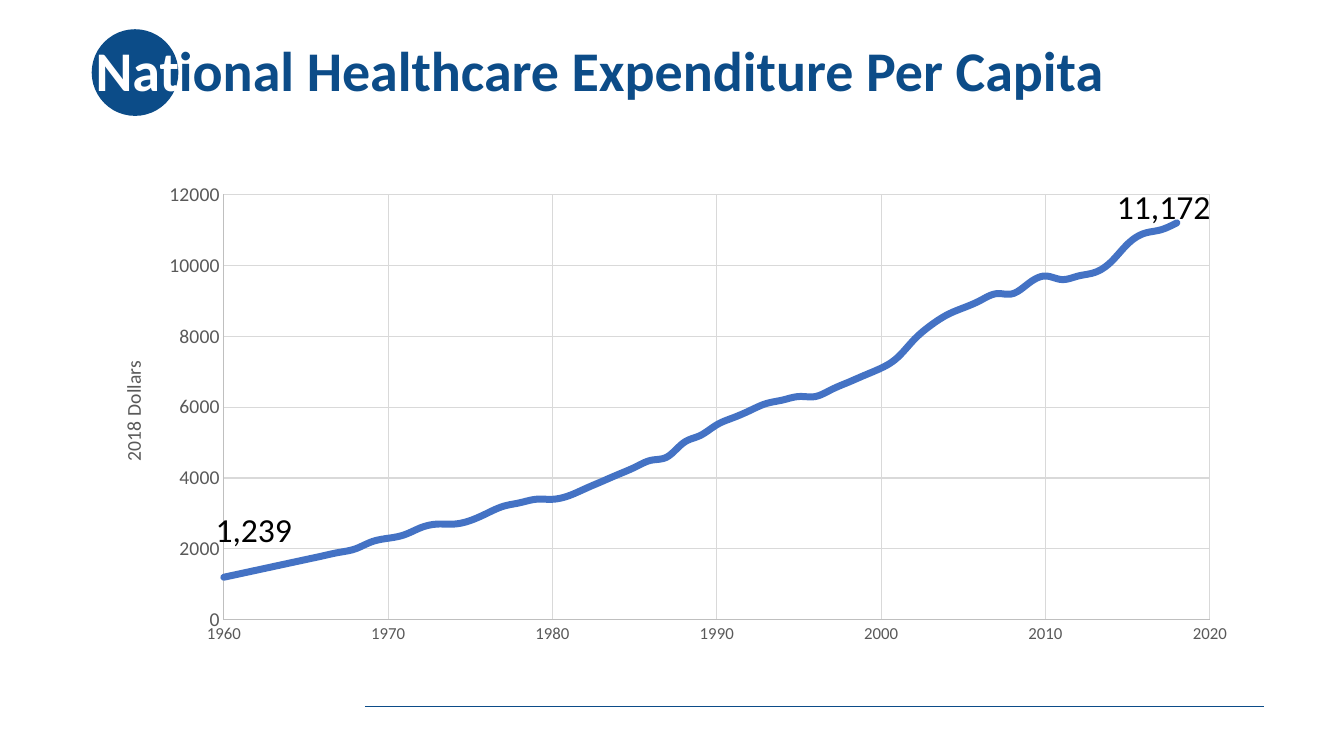
from lxml.etree import SubElement
from pptx import Presentation
from pptx.chart.data import XyChartData
from pptx.dml.color import RGBColor
from pptx.enum.chart import XL_CHART_TYPE, XL_TICK_LABEL_POSITION, XL_TICK_MARK
from pptx.enum.shapes import MSO_CONNECTOR, MSO_SHAPE
from pptx.enum.text import MSO_ANCHOR
from pptx.oxml import parse_xml
from pptx.oxml.ns import nsdecls, qn
from pptx.util import Inches, Pt

NAVY = RGBColor(0x0C, 0x4C, 0x88)
BLUE = RGBColor(0x44, 0x72, 0xC4)
WHITE = RGBColor(0xFF, 0xFF, 0xFF)
BLACK = RGBColor(0x00, 0x00, 0x00)
TEXT_GRAY = RGBColor(0x59, 0x59, 0x59)
AXIS_GRAY = RGBColor(0xBF, 0xBF, 0xBF)
GRID_GRAY = RGBColor(0xD9, 0xD9, 0xD9)
FONT = "Calibri"

TITLE = [("Nat", WHITE), ("ional Healthcare Expenditure Per Capita", NAVY)]
AXIS_TITLE = "2018 Dollars"
FIRST_YEAR = 1960
SPENDING = [
    1200, 1300, 1400, 1500, 1600, 1700, 1800, 1900, 2000, 2200,
    2300, 2400, 2600, 2700, 2700, 2800, 3000, 3200, 3300, 3400,
    3400, 3500, 3700, 3900, 4100, 4300, 4500, 4600, 5000, 5200,
    5500, 5700, 5900, 6100, 6200, 6300, 6300, 6500, 6700, 6900,
    7100, 7400, 7900, 8300, 8600, 8800, 9000, 9200, 9200, 9500,
    9700, 9600, 9700, 9800, 10100, 10600, 10900, 11000, 11200,
]
CALLOUTS = [
    ("1,239", (2.04, 5, 0.97, 0.5)),
    ("11,172", (10.98, 1.8, 1.14, 0.5)),
]
# minimum, maximum, major unit, label size
YEAR_SCALE = (1960, 2020, 10, 12)
DOLLAR_SCALE = (0, 12000, 2000, 14)
# left, top, width, height on the slide
CHART_PLACE = (0.92, 1.72, 11.5, 4.76)
PLOT_PLACE = (2.22, 1.93, 9.78, 4.22)
AXIS_TITLE_PLACE = (1.15, 3.54)


def set_font(font, size, color, bold=False):
    values = {"name": FONT, "size": Pt(size), "bold": bold}
    for name, value in values.items():
        setattr(font, name, value)
    font.color.rgb = color


def set_line(line, color, width):
    line.color.rgb = color
    line.width = Pt(width)


def add_text(page, spans, place, size, bold=False, wrap=False):
    """Add a one-paragraph box from (text, color) spans."""
    box = page.shapes.add_textbox(*map(Inches, place))
    box.text_frame.word_wrap = wrap
    para = box.text_frame.paragraphs[0]
    for text, color in spans:
        span = para.add_run()
        span.text = text
        set_font(span.font, size, color, bold)
    return box


def format_axis(axis, scale):
    low, high, unit, size = scale
    values = {
        "minimum_scale": low, "maximum_scale": high, "major_unit": unit,
        "major_tick_mark": XL_TICK_MARK.NONE,
        "minor_tick_mark": XL_TICK_MARK.NONE,
        "tick_label_position": XL_TICK_LABEL_POSITION.NEXT_TO_AXIS,
        "has_major_gridlines": True,
    }
    for name, value in values.items():
        setattr(axis, name, value)
    axis.tick_labels.number_format = "General"
    axis.tick_labels.number_format_is_linked = False
    set_font(axis.tick_labels.font, size, TEXT_GRAY)
    set_line(axis.format.line, AXIS_GRAY, 0.75)
    set_line(axis.major_gridlines.format.line, GRID_GRAY, 0.75)


def set_layout(element, index, place, target=""):
    """Fix a chart part at a slide place, stored as fractions of the chart."""
    left, top, width, height = CHART_PLACE
    fractions = [(place[0] - left) / width, (place[1] - top) / height]
    if len(place) == 4:
        fractions += [place[2] / width, place[3] / height]
    inner = f'<c:layoutTarget val="{target}"/>' if target else ""
    inner += '<c:xMode val="edge"/><c:yMode val="edge"/>'
    inner += "".join(f'<c:{key} val="{value:.4f}"/>' for key, value in zip("xywh", fractions))
    for old in element.findall(qn("c:layout")):
        element.remove(old)
    element.insert(index, parse_xml(
        f'<c:layout {nsdecls("c")}><c:manualLayout>{inner}</c:manualLayout></c:layout>'))


def add_spending_chart(page):
    data = XyChartData()
    points = data.add_series("Series 1")
    for year, dollars in enumerate(SPENDING, FIRST_YEAR):
        points.add_data_point(year, dollars)
    chart = page.shapes.add_chart(
        XL_CHART_TYPE.XY_SCATTER_SMOOTH_NO_MARKERS,
        *map(Inches, CHART_PLACE), data).chart
    chart.has_legend = False
    chart.has_title = False
    set_font(chart.font, 10, BLACK)
    plot = chart.plots[0]
    plot.vary_by_categories = False
    series = plot.series[0]
    set_line(series.format.line, BLUE, 5)
    series_xml = series._element
    series_xml.find(".//" + qn("a:ln")).set("cap", "rnd")
    for old in series_xml.findall(qn("c:smooth")):
        series_xml.remove(old)
    SubElement(series_xml, qn("c:smooth")).set("val", "1")

    format_axis(chart.category_axis, YEAR_SCALE)
    format_axis(chart.value_axis, DOLLAR_SCALE)
    title = chart.value_axis.axis_title
    title.text_frame.text = AXIS_TITLE
    set_font(title.text_frame.paragraphs[0].runs[0].font, 14, TEXT_GRAY)
    title_xml = chart.value_axis._element.find(qn("c:title"))
    body = title_xml.find(".//" + qn("a:bodyPr"))
    body.set("rot", "-5400000")
    body.set("vert", "horz")
    set_layout(title_xml, 1, AXIS_TITLE_PLACE)
    plot_area = chart._chartSpace.find(".//" + qn("c:plotArea"))
    set_layout(plot_area, 0, PLOT_PLACE, "inner")


def main():
    deck = Presentation()
    deck.slide_width, deck.slide_height = Inches(13.33), Inches(7.5)
    page = deck.slides.add_slide(deck.slide_layouts[6])

    rule = page.shapes.add_connector(
        MSO_CONNECTOR.STRAIGHT, *map(Inches, (3.62, 7.01, 12.54, 7.01)))
    set_line(rule.line, NAVY, 0.5)
    SubElement(rule._element.spPr, qn("a:effectLst"))

    circle = page.shapes.add_shape(
        MSO_SHAPE.OVAL, *map(Inches, (0.91, 0.29, 0.86, 0.86)))
    circle.shadow.inherit = False
    circle.fill.solid()
    circle.fill.fore_color.rgb = NAVY
    circle.line.fill.background()

    title = add_text(page, TITLE, (0.85, 0, 11.5, 1.45), 40, bold=True, wrap=True)
    title.text_frame.vertical_anchor = MSO_ANCHOR.MIDDLE
    title.text_frame.paragraphs[0].line_spacing = 0.9

    add_spending_chart(page)
    for text, place in CALLOUTS:
        add_text(page, [(text, BLACK)], place, 24)
    deck.save("out.pptx")


if __name__ == "__main__":
    main()
